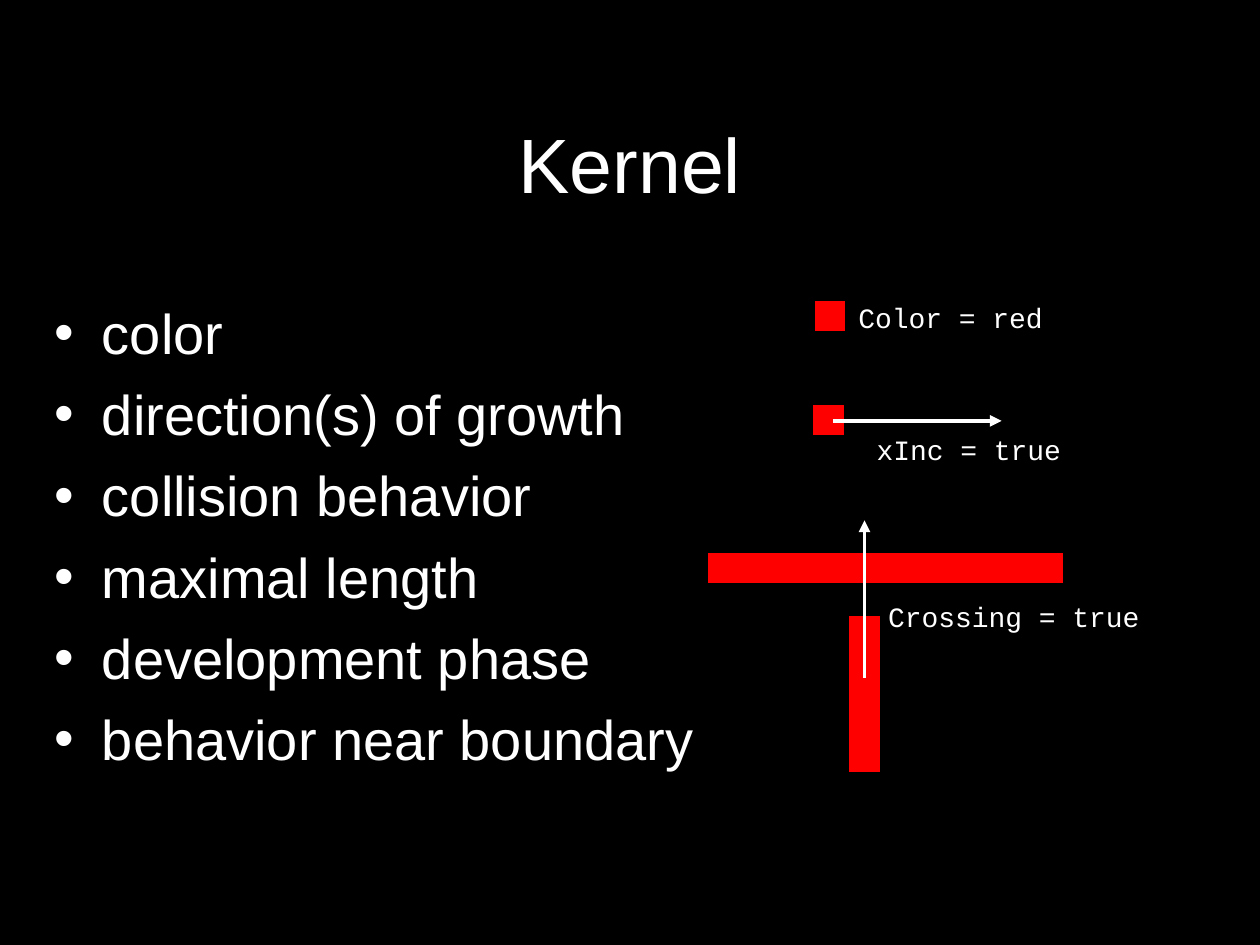
from lxml.etree import SubElement
from pptx import Presentation
from pptx.dml.color import RGBColor
from pptx.enum.shapes import MSO_CONNECTOR as CONN, MSO_SHAPE as SHAPE
from pptx.enum.text import MSO_ANCHOR as ANCHOR, MSO_AUTO_SIZE as AUTO, PP_ALIGN as ALIGN
from pptx.oxml.ns import qn
from pptx.util import Pt

COLORS = {"background": "000000", "text": "FFFFFF", "kernel": "FF0000"}
CELL = 18  # side of a kernel cell and width of a grown bar
TRAITS = ["color", "direction(s) of growth", "collision behavior",
          "maximal length", "development phase", "behavior near boundary"]


def color(name):
    return RGBColor.from_string(COLORS[name])


def set_font(font, name, size):
    font.name, font.size = name, Pt(size)
    font.color.rgb = color("text")


def place(shape, box):
    shape.left, shape.top, shape.width, shape.height = map(Pt, box)


def add_block(shapes, x, y, w=CELL, h=CELL):
    sp = shapes.add_shape(SHAPE.RECTANGLE, Pt(x), Pt(y), Pt(w), Pt(h))
    sp.shadow.inherit = False
    sp.fill.solid()
    sp.fill.fore_color.rgb = color("kernel")
    sp.line.color.rgb = color("background")
    sp.line.width = Pt(0.75)


def add_arrow(shapes, x1, y1, x2, y2):
    line = shapes.add_connector(CONN.STRAIGHT, Pt(x1), Pt(y1), Pt(x2), Pt(y2))
    line.line.color.rgb = color("text")
    line.line.width = Pt(2.25)
    SubElement(line.line._get_or_add_ln(), qn("a:tailEnd"), type="triangle")
    SubElement(line._element.spPr, qn("a:effectLst"))


def add_label(shapes, x, y, text):
    tf = shapes.add_textbox(Pt(x), Pt(y), Pt(162), Pt(26.6)).text_frame
    tf.word_wrap = True
    tf.auto_size = AUTO.SHAPE_TO_FIT_TEXT
    tf.text = text
    set_font(tf.paragraphs[0].runs[0].font, "Courier New", 16)


def add_title(s, box):
    title = s.shapes.title
    place(title, box)
    tf = title.text_frame
    tf.text = "Kernel"
    tf.vertical_anchor = ANCHOR.MIDDLE
    p = tf.paragraphs[0]
    p.alignment = ALIGN.CENTER
    set_font(p.runs[0].font, "Arial", 44)


def add_traits(s, box):
    body = s.placeholders[1]
    place(body, box)
    tf = body.text_frame
    tf.text = "\n".join(TRAITS)
    tf.auto_size = AUTO.NONE
    for i, p in enumerate(tf.paragraphs):
        p.space_before = Pt(8 if i else 0)
        pPr = p._p.get_or_add_pPr()
        pPr.set("marL", str(Pt(27)))
        pPr.set("indent", str(-Pt(27)))
        SubElement(pPr, qn("a:buFont"), typeface="Arial")
        SubElement(pPr, qn("a:buChar"), char="•")
        set_font(p.runs[0].font, "Arial", 32)


def add_growth(s, x, y):
    shapes = s.shapes.add_group_shape().shapes
    add_block(shapes, x, y)
    add_arrow(shapes, x + 11.5, y + 9.5, x + 108, y + 9.5)
    add_label(shapes, x + 29.5, y + 12.4, "xInc = true")


def add_crossing(s, x, y):
    shapes = s.shapes.add_group_shape().shapes
    axis = x + 90
    add_block(shapes, x, y + 18, w=204)
    add_block(shapes, axis - CELL / 2, y + 54, h=90)
    add_arrow(shapes, axis, y + 90, axis, y)
    add_label(shapes, axis + 6.4, y + 41.8, "Crossing = true")


def add_color(s, x, y):
    add_block(s.shapes, x, y)
    add_label(s.shapes, x + CELL, y - 3, "Color = red")


def main():
    prs = Presentation()
    prs.slide_width, prs.slide_height = Pt(720), Pt(540)
    s = prs.slides.add_slide(prs.slide_layouts[1])
    s.background.fill.solid()
    s.background.fill.fore_color.rgb = color("background")

    # Title and list of kernel traits
    add_title(s, (54, 48, 612, 90))
    add_traits(s, (24, 167, 696, 324))

    # Examples on the right
    add_growth(s, 464.4, 231)
    add_crossing(s, 404, 297.4)
    add_color(s, 465.4, 171.4)

    prs.save("out.pptx")


if __name__ == "__main__":
    main()
